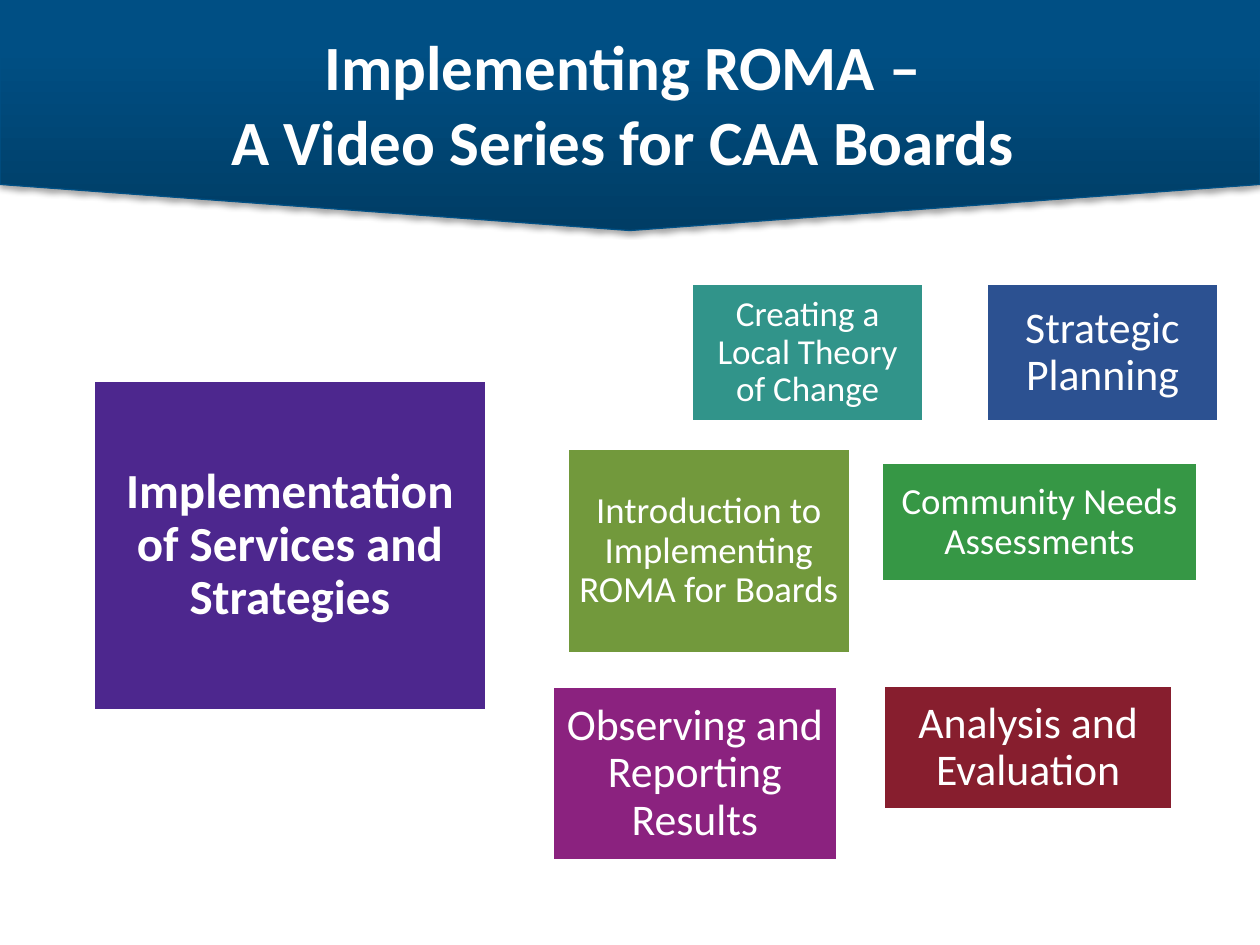
from dataclasses import dataclass

from lxml import etree
from pptx import Presentation, util as u
from pptx.dml.color import RGBColor
from pptx.enum import shapes, text
from pptx.oxml import ns


@dataclass(frozen=True)
class Theme:
    font: str = "Calibri"
    white: str = "FFFFFF"
    shadow: str = "000000"
    banner_line: str = "005085"
    banner_stops: tuple = ((0, "003D65"), (80, "004F84"), (100, "005084"))
    purple: str = "4D278E"
    teal: str = "31948A"
    blue: str = "2C5191"
    olive: str = "72993C"
    green: str = "369745"
    magenta: str = "8B227F"
    red: str = "871E2E"
    title: int = 36
    main: int = 28
    large: int = 25
    medium: int = 21
    small: int = 20


theme = Theme()


def add_span(para, words, size, bold=False):
    span = para.add_run()
    span.text = words
    span.font.name = theme.font
    span.font.size = u.Pt(size)
    span.font.bold = bold
    span.font.color.rgb = RGBColor.from_string(theme.white)


def add_xml(parent, tag, **attributes):
    return etree.SubElement(parent, ns.qn(tag), attributes)


deck = Presentation()
deck.slide_width, deck.slide_height = u.Inches(10), u.Inches(7.5)
page = deck.slides.add_slide(deck.slide_layouts[5])

# Banner with a downward point, behind the title
banner = page.shapes.add_shape(
    shapes.MSO_SHAPE.FLOWCHART_OFFPAGE_CONNECTOR,
    0, 0, u.Inches(10), u.Inches(1.83))
banner.line.color.rgb = RGBColor.from_string(theme.banner_line)
banner.line.width = u.Pt(0.75)
banner.fill.gradient()
banner.fill.gradient_angle = 90
properties = banner.element.spPr
stops = properties.find(".//" + ns.qn("a:gsLst"))
for stop in list(stops):
    stops.remove(stop)
for position, color in theme.banner_stops:
    stop = add_xml(stops, "a:gs", pos=str(position * 1000))
    add_xml(stop, "a:srgbClr", val=color)
banner.shadow.inherit = False
shadow = add_xml(properties.find(ns.qn("a:effectLst")), "a:outerShdw",
                 blurRad=str(u.Pt(3.1)), dist=str(u.Pt(1.8)),
                 dir="5400000", rotWithShape="0")
shadow_color = add_xml(shadow, "a:srgbClr", val=theme.shadow)
add_xml(shadow_color, "a:alpha", val="35000")

title = page.shapes.title
banner.element.addnext(title.element)
title.left, title.top = u.Inches(0.5), u.Inches(0.19)
title.width, title.height = u.Inches(9), u.Inches(1.25)
title.text_frame.auto_size = text.MSO_AUTO_SIZE.NONE
title.text_frame.vertical_anchor = text.MSO_ANCHOR.MIDDLE
para = title.text_frame.paragraphs[0]
para.alignment = text.PP_ALIGN.CENTER
add_span(para, "Implementing ROMA – ", theme.title, bold=True)
para.add_line_break()
add_span(para, "A Video Series for CAA Boards ", theme.title, bold=True)

# Left, top, width, height, inset, fill, type size, words
topics = [
    (4.5, 3.56, 2.25, 1.63, 0.08, theme.olive, theme.medium,
     "Introduction to Implementing ROMA for Boards"),
    (6.99, 3.67, 2.52, 0.95, 0.09, theme.green, theme.medium,
     "Community Needs Assessments"),
    (5.49, 2.25, 1.84, 1.1, 0.08, theme.teal, theme.small,
     "Creating a Local Theory of Change"),
    (7.83, 2.25, 1.84, 1.1, 0.1, theme.blue, theme.large,
     "Strategic Planning"),
    (0.74, 3.02, 3.12, 2.62, 0.12, theme.purple, theme.main,
     "Implementation of Services and Strategies"),
    (4.38, 5.45, 2.27, 1.38, 0.1, theme.magenta, theme.large,
     "Observing and Reporting Results"),
    (7.01, 5.44, 2.3, 0.99, 0.1, theme.red, theme.large,
     "Analysis and Evaluation"),
]
for left, top, width, height, inset, color, size, words in topics:
    box = page.shapes.add_shape(
        shapes.MSO_SHAPE.RECTANGLE,
        u.Inches(left), u.Inches(top), u.Inches(width), u.Inches(height))
    box.shadow.inherit = False
    box.fill.solid()
    box.fill.fore_color.rgb = RGBColor.from_string(color)
    box.line.color.rgb = RGBColor.from_string(theme.white)
    box.line.width = u.Pt(2)
    frame = box.text_frame
    frame.word_wrap = True
    frame.vertical_anchor = text.MSO_ANCHOR.MIDDLE
    frame.margin_left = frame.margin_right = u.Inches(inset)
    frame.margin_top = frame.margin_bottom = u.Inches(inset)
    para = frame.paragraphs[0]
    para.alignment = text.PP_ALIGN.CENTER
    para.line_spacing = 0.9
    add_span(para, words, size, bold=size == theme.main)

deck.save("out.pptx")
